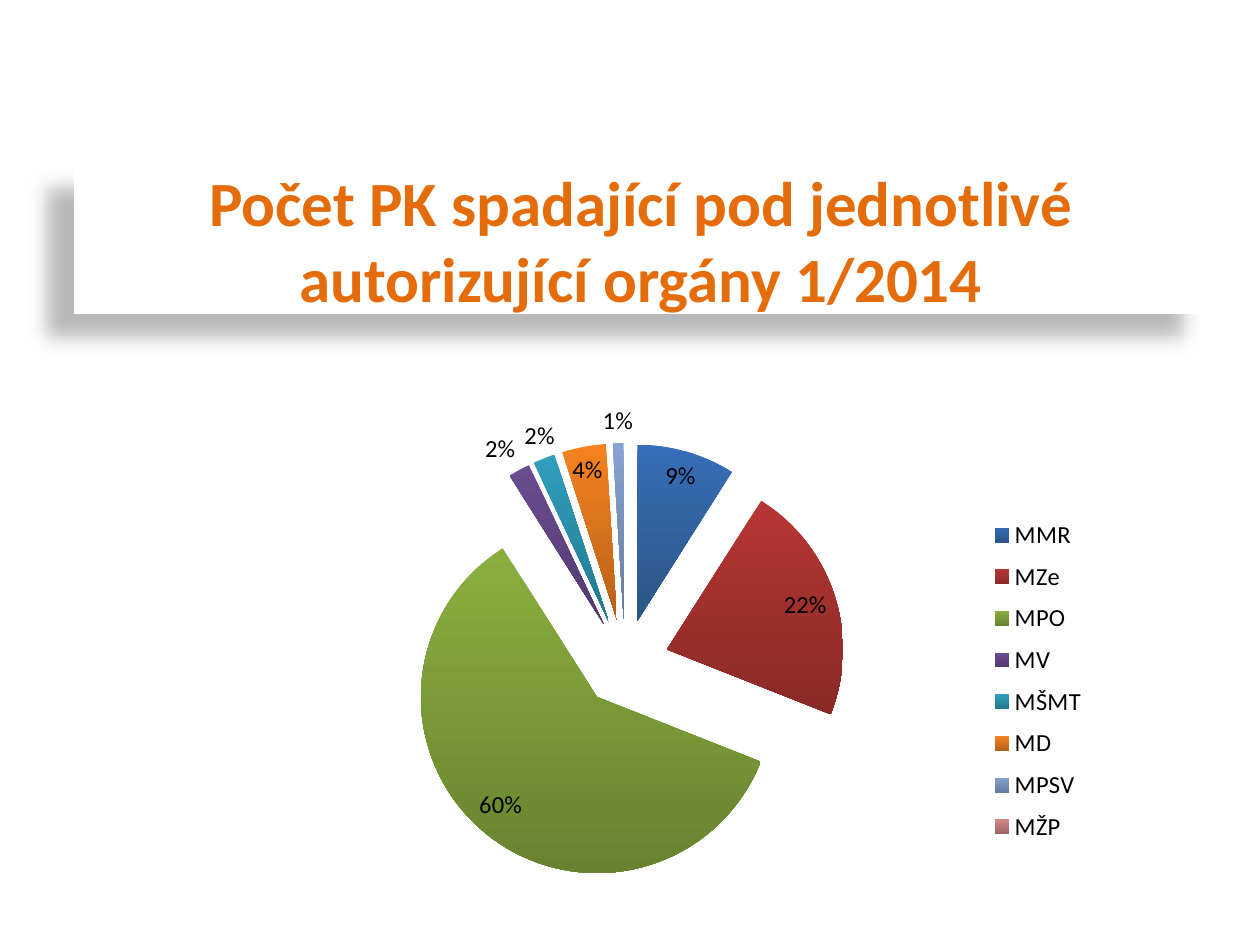
from pptx import Presentation
from pptx.chart.data import CategoryChartData
from pptx.dml.color import RGBColor
from pptx.enum.chart import XL_CHART_TYPE, XL_LABEL_POSITION, XL_LEGEND_POSITION
from pptx.enum.text import MSO_ANCHOR, PP_ALIGN
from pptx.oxml import parse_xml
from pptx.oxml.ns import nsdecls
from pptx.util import Pt

PX = 914400 // 126
COLORS = {"title": "E46C0A", "outline": "984807", "box": "FFFFFF", "text": "000000"}
# Category: value, top colour, bottom colour
SLICES = {
    "MMR": (9, "376EB8", "2C5584"),
    "MZe": (22, "B63633", "892A27"),
    "MPO": (60, "8AAF3F", "68832F"),
    "MV": (2, "6B4D92", "51396E"),
    "MŠMT": (2, "2F9FBD", "24788E"),
    "MD": (4, "F58220", "B86118"),
    "MPSV": (1, "87A3D2", "657A9E"),
    "MŽP": (0, "D38785", "9E6564"),
}


def set_font(font, size, color="text", bold=False):
    font.name = "Calibri"
    font.size = Pt(size)
    font.bold = bold
    font.color.rgb = RGBColor.from_string(COLORS[color])


def layout_xml(x, y, w, h, target=""):
    return parse_xml(
        f'<c:layout {nsdecls("c")}><c:manualLayout>{target}'
        '<c:xMode val="edge"/><c:yMode val="edge"/>'
        f'<c:x val="{x}"/><c:y val="{y}"/><c:w val="{w}"/><c:h val="{h}"/>'
        '</c:manualLayout></c:layout>')


prs = Presentation()
prs.slide_width, prs.slide_height = 1260 * PX, 945 * PX
s = prs.slides.add_slide(prs.slide_layouts[5])

# Title with a soft shadow behind its box
title = s.shapes.title
title.left, title.top, title.width, title.height = [v * PX for v in (74, 165, 1134, 149)]
title.fill.solid()
title.fill.fore_color.rgb = RGBColor.from_string(COLORS["box"])
title._element.spPr.append(parse_xml(
    f'<a:effectLst {nsdecls("a")}><a:outerShdw blurRad="{Pt(11.8)}" dist="{Pt(19.7)}" '
    'dir="8460000" algn="tl" rotWithShape="0"><a:srgbClr val="000000">'
    '<a:alpha val="28000"/></a:srgbClr></a:outerShdw></a:effectLst>'))
tf = title.text_frame
tf.text = "Počet PK spadající pod jednotlivé\vautorizující orgány 1/2014"
tf.word_wrap = True
tf.vertical_anchor = MSO_ANCHOR.MIDDLE
p = tf.paragraphs[0]
p.alignment = PP_ALIGN.CENTER
for r in p.runs:
    set_font(r.font, 36, "title", bold=True)
    r.font._element.insert(0, parse_xml(
        f'<a:ln {nsdecls("a")} w="{Pt(1)}"><a:solidFill>'
        f'<a:srgbClr val="{COLORS["outline"]}"/></a:solidFill></a:ln>'))

# Exploded pie chart
data = CategoryChartData()
data.categories = list(SLICES)
data.add_series("Series 1", [value for value, *_ in SLICES.values()])
chart = s.shapes.add_chart(XL_CHART_TYPE.PIE_EXPLODED,
                           *[v * PX for v in (54, 324, 1131, 595)], data).chart
chart.has_title = False
set_font(chart.font, 10)
plot = chart.plots[0]
plot.vary_by_categories = True
plot_area = chart._chartSpace.chart.plotArea
for old in plot_area.findall("{*}layout"):
    plot_area.remove(old)
plot_area.insert(0, layout_xml(0.31, 0.2, 0.39, 0.74, '<c:layoutTarget val="inner"/>'))

# Slice gradients
series = plot.series[0]
for i, (_, *shades) in enumerate(SLICES.values()):
    fill = series.points[i].format.fill
    fill.gradient()
    fill.gradient_angle = 270
    for stop, shade in zip(fill.gradient_stops, shades):
        stop.color.rgb = RGBColor.from_string(shade)

# Percent labels, none on the empty last slice
labels = series.data_labels
labels.show_percentage = True
labels.show_value = False
labels.number_format = "0%"
labels.number_format_is_linked = False
labels.position = XL_LABEL_POSITION.BEST_FIT
set_font(labels.font, 14)
labels._element.insert(0, parse_xml(
    f'<c:dLbl {nsdecls("c")}><c:idx val="{len(SLICES) - 1}"/><c:delete val="1"/></c:dLbl>'))

# Legend
chart.has_legend = True
legend = chart.legend
legend.position = XL_LEGEND_POSITION.RIGHT
legend.include_in_layout = False
set_font(legend.font, 14)
for old in legend._element.findall("{*}layout"):
    legend._element.remove(old)
legend._element.find("{*}legendPos").addnext(layout_xml(0.82, 0.31, 0.1, 0.58))

prs.save("out.pptx")
